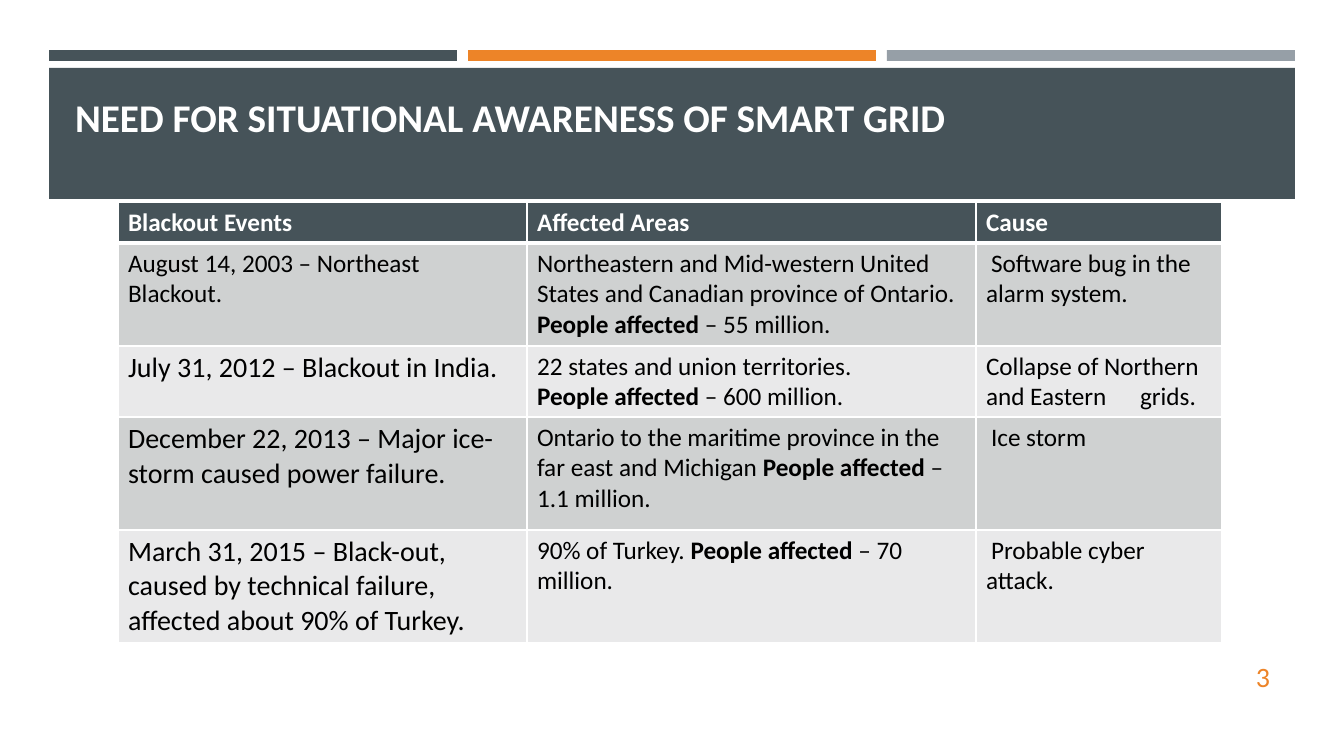
"""Build the slide on blackout events that show the need for situational awareness."""
from dataclasses import dataclass

from lxml import etree
from pptx import Presentation, util as u
from pptx.dml.color import RGBColor
from pptx.enum import shapes, text
from pptx.oxml import ns

EMU_PER_PX = 914400 / 100.8
FONT = "Calibri"
COLORS = {
    "slate": "465359",
    "orange": "ED8428",
    "gray": "969FA7",
    "dark_row": "CFD1D1",
    "light_row": "E9E9EA",
    "white": "FFFFFF",
    "black": "000000",
}


@dataclass(frozen=True)
class Bar:
    left: int
    top: int
    width: int
    height: int
    color: str


@dataclass(frozen=True)
class Entry:
    """A table cell: paragraphs with **bold** parts, a size and a layout in px."""
    paragraphs: tuple[str, ...]
    size: int = 18
    indent: int = 0
    tab: int = 0


@dataclass(frozen=True)
class Event:
    height: int
    entries: tuple[Entry, Entry, Entry]


BARS = [Bar(49 + 419 * i, 50, 408, 11, color)
        for i, color in enumerate(("slate", "orange", "gray"))]
BARS.append(Bar(49, 68, 1246, 131, "slate"))

COLUMN_WIDTHS = (409, 449, 246)
EVENTS = (
    Event(41, (
        Entry(("**Blackout Events**",)),
        Entry(("**Affected Areas**",)),
        Entry(("**Cause**",)),
    )),
    Event(103, (
        Entry(("August 14, 2003 – Northeast Blackout.",)),
        Entry(("Northeastern and Mid-western United States and Canadian "
               "province of Ontario. **People affected** – 55 million.",)),
        Entry(("Software bug in the alarm system.",), indent=5),
    )),
    Event(71, (
        Entry(("July 31, 2012 – Blackout in India.",), size=20),
        Entry(("22 states and union territories.",
               "**People affected** – 600 million.")),
        Entry(("Collapse of Northern and Eastern\tgrids.",), tab=154),
    )),
    Event(113, (
        Entry(("December 22, 2013 – Major ice-storm caused power failure.",), size=20),
        Entry(("Ontario to the maritime province in the far east and Michigan "
               "**People affected **– 1.1 million.",)),
        Entry(("Ice storm",), indent=5),
    )),
    Event(113, (
        Entry(("March 31, 2015 – Black-out,",
               "caused by technical failure, affected about 90% of Turkey."), size=20),
        Entry(("90% of Turkey. **People affected** – 70 million.",)),
        Entry(("Probable cyber attack.",), indent=5),
    )),
)


def px(length: int) -> u.Emu:
    return u.Emu(round(length * EMU_PER_PX))


def rgb(name: str) -> RGBColor:
    return RGBColor.from_string(COLORS[name])


def style(font, size: int, color: str, bold: bool = False) -> None:
    font.name, font.size, font.bold = FONT, u.Pt(size), bold
    font.color.rgb = rgb(color)


def draw_bar(slide, bar: Bar) -> None:
    shape = slide.shapes.add_shape(
        shapes.MSO_SHAPE.RECTANGLE, *map(px, (bar.left, bar.top, bar.width, bar.height)))
    shape.shadow.inherit = False
    shape.fill.solid()
    shape.fill.fore_color.rgb = rgb(bar.color)
    shape.line.fill.background()


def draw_title(slide, wording: str) -> None:
    title = slide.shapes.title
    title.left, title.top, title.width, title.height = map(px, (65, 78, 1216, 112))
    frame = title.text_frame
    frame.text = wording
    frame.auto_size = text.MSO_AUTO_SIZE.NONE
    frame.vertical_anchor = text.MSO_ANCHOR.BOTTOM
    frame.margin_bottom = px(50)
    frame.paragraphs[0].alignment = text.PP_ALIGN.LEFT
    style(frame.paragraphs[0].runs[0].font, 28, "white", True)
    title._element.getparent().append(title._element)


def draw_page_number(slide, number: str) -> None:
    frame = slide.shapes.add_textbox(*map(px, (1164, 656, 116, 40))).text_frame
    frame.word_wrap = True
    frame.vertical_anchor = text.MSO_ANCHOR.MIDDLE
    frame.text = number
    frame.paragraphs[0].alignment = text.PP_ALIGN.RIGHT
    style(frame.paragraphs[0].runs[0].font, 20, "orange")


def add_borders(cell, top: int, bottom: int) -> None:
    properties = cell._tc.get_or_add_tcPr()
    for side, points in (("L", 1), ("R", 1), ("T", top), ("B", bottom)):
        border = etree.SubElement(properties, ns.qn(f"a:ln{side}"), w=str(u.Pt(points)))
        fill = etree.SubElement(border, ns.qn("a:solidFill"))
        etree.SubElement(fill, ns.qn("a:srgbClr"), val=COLORS["white"])


def fill_cell(cell, entry: Entry, color: str) -> None:
    frame = cell.text_frame
    for i, wording in enumerate(entry.paragraphs):
        paragraph = frame.add_paragraph() if i else frame.paragraphs[0]
        properties = paragraph._p.get_or_add_pPr()
        if entry.indent:
            properties.set("indent", str(px(entry.indent)))
        if entry.tab:
            tabs = etree.SubElement(properties, ns.qn("a:tabLst"))
            etree.SubElement(tabs, ns.qn("a:tab"), pos=str(px(entry.tab)), algn="l")
        for part, piece in enumerate(wording.split("**")):
            if piece:
                run = paragraph.add_run()
                run.text = piece
                style(run.font, entry.size, color, part % 2 == 1)


def draw_events(slide) -> None:
    table = slide.shapes.add_table(
        len(EVENTS), len(COLUMN_WIDTHS), px(118), px(202),
        px(sum(COLUMN_WIDTHS)), px(sum(event.height for event in EVENTS))).table
    for column, width in zip(table.columns, COLUMN_WIDTHS):
        column.width = px(width)
    for i, event in enumerate(EVENTS):
        table.rows[i].height = px(event.height)
        shade = ("dark_row" if i % 2 else "light_row") if i else "slate"
        for cell, entry in zip(table.rows[i].cells, event.entries):
            add_borders(cell, top=3 if i == 1 else 1, bottom=1 if i else 3)
            cell.fill.solid()
            cell.fill.fore_color.rgb = rgb(shade)
            fill_cell(cell, entry, "black" if i else "white")


def main() -> None:
    deck = Presentation()
    deck.slide_width, deck.slide_height = px(1344), px(756)
    slide = deck.slides.add_slide(deck.slide_layouts[5])
    for bar in BARS:
        draw_bar(slide, bar)
    draw_title(slide, "NEED FOR SITUATIONAL AWARENESS OF SMART GRID")
    draw_page_number(slide, "3")
    draw_events(slide)
    deck.save("out.pptx")


if __name__ == "__main__":
    main()
